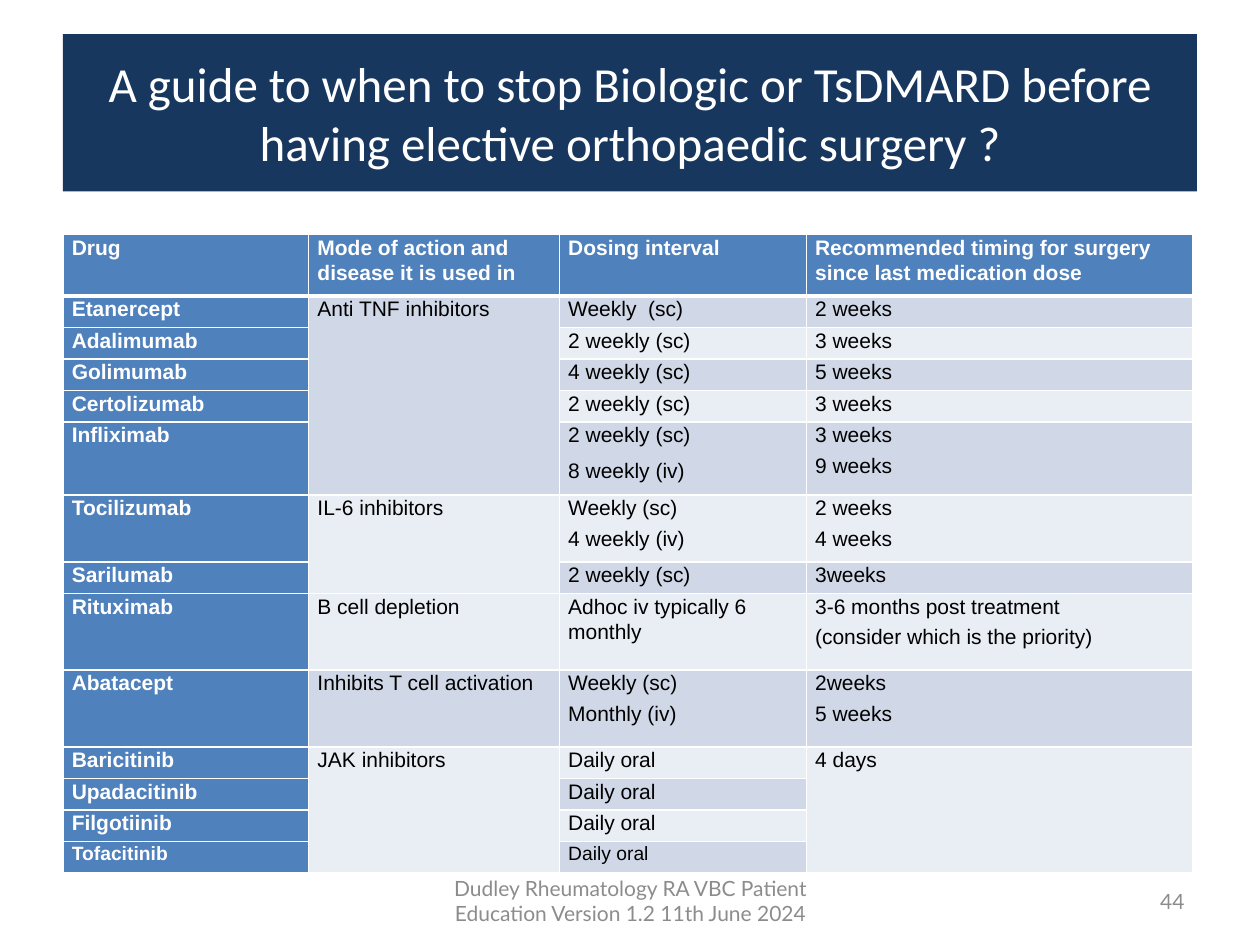
from lxml import etree
from pptx import Presentation
from pptx import util as u
from pptx.dml.color import RGBColor
from pptx.enum import shapes, text
from pptx.oxml import ns

TITLE = "A guide to when to stop Biologic or TsDMARD before having elective orthopaedic surgery ?"
FOOTER = "Dudley Rheumatology RA VBC Patient Education Version 1.2 11th June 2024"
PAGE_NUMBER = "44"

HEADINGS = ["Drug", "Mode of action and disease it is used in", "Dosing interval",
            "Recommended timing for surgery since last medication dose"]

# Row height, drug, mode of action, dosing, timing; None continues the cell above,
# and a tuple holds one paragraph per item
DRUGS = [
    (0.25, "Etanercept", "Anti TNF inhibitors", "Weekly  (sc)", "2 weeks"),
    (0.25, "Adalimumab", None, "2 weekly (sc)", "3 weeks"),
    (0.25, "Golimumab", None, "4 weekly (sc)", "5 weeks"),
    (0.25, "Certolizumab", None, "2 weekly (sc)", "3 weeks"),
    (0.58, "Infliximab", None, ("2 weekly (sc)", "8 weekly (iv)"), ("3 weeks", "9 weeks")),
    (0.53, "Tocilizumab", "IL-6 inhibitors", ("Weekly (sc)", "4 weekly (iv)"),
     ("2 weeks", "4 weeks")),
    (0.25, "Sarilumab", None, "2 weekly (sc)", "3weeks"),
    (0.61, "Rituximab", "B cell depletion", "Adhoc iv typically 6 monthly",
     ("3-6 months post treatment", "(consider which is the priority)")),
    (0.61, "Abatacept", "Inhibits T cell activation", ("Weekly (sc)", "Monthly (iv)"),
     ("2weeks", "5 weeks")),
    (0.25, "Baricitinib", "JAK inhibitors", "Daily oral", "4 days"),
    (0.25, "Upadacitinib", None, "Daily oral", None),
    (0.25, "Filgotiinib", None, "Daily oral", None),
    (0.25, "Tofacitinib", None, "Daily oral", None),
]
SPACED_LAST = "8 weekly (iv)"  # closing paragraph that keeps the spacing of the one above
COLUMN_WIDTHS = [1.95, 1.99, 1.96, 3.07]
HEADER_HEIGHT = 0.49

NAVY, BLUE, WHITE, BLACK, GREY = "17375E", "4F81BD", "FFFFFF", "000000", "8C8C8C"
BANDS = ["E9EDF4", "D0D8E8"]
ALIGN = text.PP_ALIGN


def color(value):
    return RGBColor.from_string(value)


def paint(target, value):
    target.fill.solid()
    target.fill.fore_color.rgb = color(value)


def write(para, words, size=12, font="Arial", ink=BLACK, bold=False, align=None,
          before=None, after=None, line=None):
    span = para.add_run()
    span.text = words
    span.font.size, span.font.name, span.font.bold = u.Pt(size), font, bold
    span.font.color.rgb = color(ink)
    para.alignment, para.line_spacing = align, line
    if before is not None:
        para.space_before = u.Pt(before)
    if after is not None:
        para.space_after = u.Pt(after)


def write_cell(cell, content, **style):
    lines = content if isinstance(content, tuple) else (content,)
    for index, words in enumerate(lines):
        para = cell.text_frame.paragraphs[0] if index == 0 else cell.text_frame.add_paragraph()
        if index < len(lines) - 1 or words == SPACED_LAST:
            spacing = dict(align=ALIGN.JUSTIFY, before=3, after=3)
        else:
            spacing = dict(after=8)
        write(para, words, line=1.07, **spacing, **style)


def set_borders(cell, widths):
    properties = cell._tc.get_or_add_tcPr()
    for side, width in widths.items():
        border = etree.SubElement(properties, ns.qn(f"a:ln{side}"), w=str(u.Pt(width)))
        fill = etree.SubElement(border, ns.qn("a:solidFill"))
        etree.SubElement(fill, ns.qn("a:srgbClr"), val=WHITE)


def add_text(page, words, left, width, align):
    box = page.shapes.add_textbox(u.Inches(left), u.Inches(6.95), u.Inches(width), u.Inches(0.4))
    box.text_frame.word_wrap = True
    box.text_frame.vertical_anchor = text.MSO_ANCHOR.MIDDLE
    write(box.text_frame.paragraphs[0], words, font="Lato", ink=GREY, align=align)


def add_title(page):
    banner = page.shapes.add_shape(shapes.MSO_SHAPE.RECTANGLE, u.Inches(0.5), u.Inches(0.27),
                                   u.Inches(9), u.Inches(1.25))
    banner.shadow.inherit = False
    paint(banner, NAVY)
    banner.line.fill.background()
    banner.text_frame.word_wrap = True
    banner.text_frame.vertical_anchor = text.MSO_ANCHOR.MIDDLE
    write(banner.text_frame.paragraphs[0], TITLE, size=28, font="Calibri", ink=WHITE,
          align=ALIGN.CENTER)


def add_drug_table(page):
    rows = [(HEADER_HEIGHT, *HEADINGS)] + DRUGS
    heights = [row[0] for row in rows]
    table = page.shapes.add_table(len(rows), len(HEADINGS), u.Inches(0.5), u.Inches(1.86),
                                  u.Inches(sum(COLUMN_WIDTHS)), u.Inches(sum(heights))).table
    for column, width in zip(table.columns, COLUMN_WIDTHS):
        column.width = u.Inches(width)
    for row, height in zip(table.rows, heights):
        row.height = u.Inches(height)

    for r, (_, *contents) in enumerate(rows):
        for c, content in enumerate(contents):
            cell = table.cell(r, c)
            cell.margin_left = cell.margin_right = u.Inches(0.07)
            cell.margin_top = cell.margin_bottom = 0
            # The heading row is set off by a thicker rule
            set_borders(cell, {"L": 1, "R": 1, "T": 3 if r == 1 else 1, "B": 3 if r == 0 else 1})
            label = r == 0 or c == 0
            paint(cell, BLUE if label else BANDS[r % 2])
            if content is None:
                # Small text size keeps covered cells from stretching their row
                para = cell.text_frame.paragraphs[0]
                etree.SubElement(para._p, ns.qn("a:endParaRPr"), sz="1100")
            else:
                write_cell(cell, content, size=11 if r == len(rows) - 1 else 12,
                           ink=WHITE if label else BLACK, bold=label)

    # Join each cell with the continuation cells below it
    for c in range(len(HEADINGS)):
        starts = [r for r, row in enumerate(rows) if row[c + 1] is not None] + [len(rows)]
        for first, following in zip(starts, starts[1:]):
            if following - first > 1:
                table.cell(first, c).merge(table.cell(following - 1, c))


def main():
    deck = Presentation()
    deck.slide_width, deck.slide_height = u.Inches(10), u.Inches(7.5)
    page = deck.slides.add_slide(deck.slide_layouts[6])
    add_title(page)
    add_drug_table(page)
    # Footer and page number
    add_text(page, FOOTER, 3.42, 3.17, ALIGN.CENTER)
    add_text(page, PAGE_NUMBER, 7.17, 2.33, ALIGN.RIGHT)
    deck.save("out.pptx")


if __name__ == "__main__":
    main()
